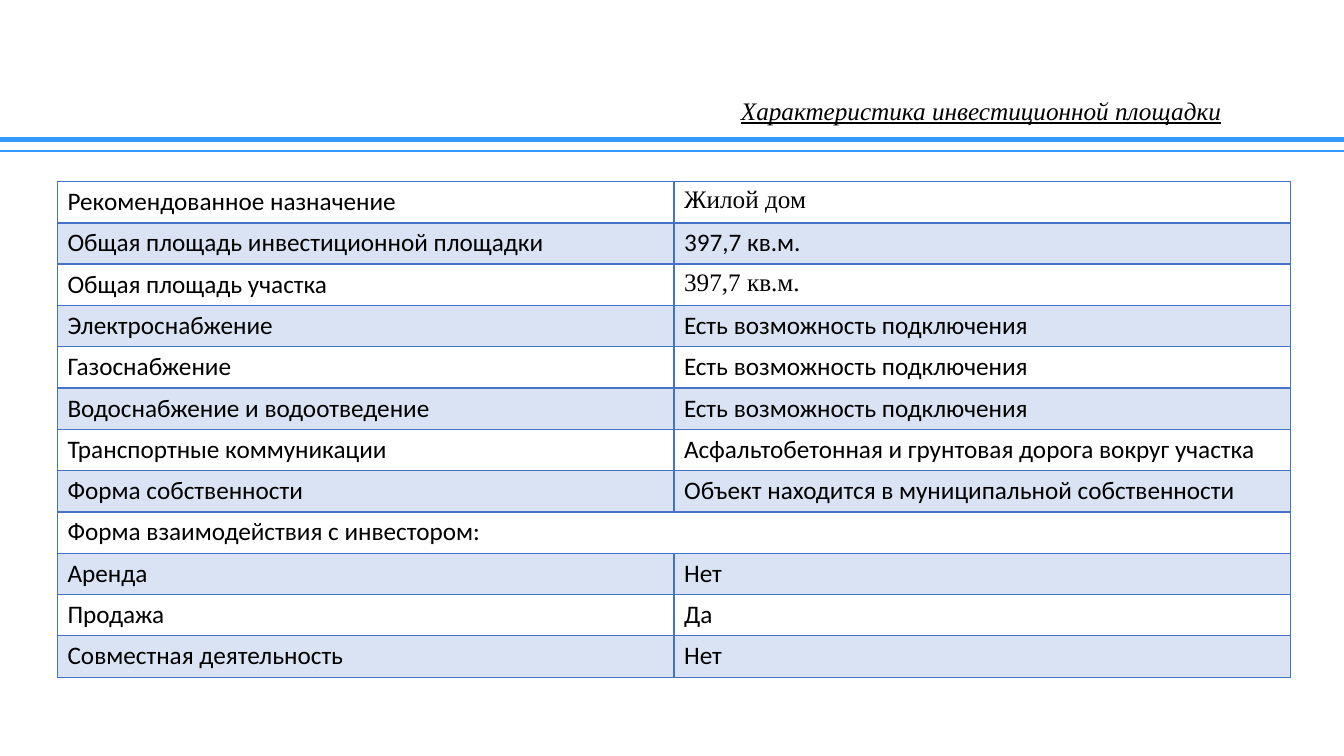
from dataclasses import dataclass

from lxml import etree
from pptx import Presentation
from pptx.dml.color import RGBColor
from pptx.enum.shapes import MSO_CONNECTOR
from pptx.enum.text import MSO_ANCHOR, PP_ALIGN
from pptx.oxml.ns import qn
from pptx.util import Inches, Pt

STRAIGHT = MSO_CONNECTOR.STRAIGHT
MIDDLE = MSO_ANCHOR.MIDDLE
CENTER = PP_ALIGN.CENTER

WIDE, HIGH = Inches(13.33), Inches(7.5)
HEX = {"rule": "3399FF", "edge": "4472C4", "band": "DAE3F3", "ink": "000000"}
SANS, SERIF = "Calibri", "Times New Roman"
BODY = {"size": Pt(18), "name": SANS, "bold": False}
HEAD = {"size": Pt(18), "name": SERIF, "italic": True, "underline": True}
FLAT = {"margin_top": 0, "margin_bottom": 0, "word_wrap": True,
        "vertical_anchor": MIDDLE}
PLAIN = {"first_row": False, "horz_banding": False}


@dataclass
class Rule:
    y: float  # share of the slide's height
    width: float


@dataclass
class Trait:
    label: str
    value: str = ""  # a trait without a value spans both columns
    face: str = SANS


RULES = [Rule(1.38 / 7.5, 3.5), Rule(0.2, 1.5)]
LINK = "Есть возможность подключения"
TRAITS = [
    Trait("Рекомендованное назначение", "Жилой дом", SERIF),
    Trait("Общая площадь инвестиционной площадки", "397,7 кв.м."),
    Trait("Общая площадь участка", "397,7 кв.м.", SERIF),
    Trait("Электроснабжение", LINK),
    Trait("Газоснабжение", LINK),
    Trait("Водоснабжение и водоотведение", LINK),
    Trait("Транспортные коммуникации",
          "Асфальтобетонная и грунтовая дорога вокруг участка"),
    Trait("Форма собственности",
          "Объект находится в муниципальной собственности"),
    Trait("Форма взаимодействия с инвестором:"),
    Trait("Аренда", "Нет"),
    Trait("Продажа", "Да"),
    Trait("Совместная деятельность", "Нет"),
]


def tint(name: str) -> RGBColor:
    return RGBColor.from_string(HEX[name])


def apply(item, form: dict) -> None:
    for key, value in form.items():
        setattr(item, key, value)


def write(frame, text: str, form: dict):
    par = frame.paragraphs[0]
    run = par.add_run()
    run.text = text
    apply(run.font, form)
    run.font.color.rgb = tint("ink")
    return par


def draw_rule(slide, rule: Rule) -> None:
    y = int(HIGH * rule.y)
    line = slide.shapes.add_connector(STRAIGHT, 0, y, WIDE, y)
    line.line.color.rgb = tint("rule")
    line.line.width = Pt(rule.width)
    etree.SubElement(line._element.spPr, qn("a:effectLst"))


def draw_title(slide, text: str) -> None:
    box = slide.shapes.add_textbox(WIDE // 2, int(HIGH * 0.13),
                                   int(WIDE * 0.46), int(HIGH * 0.036))
    apply(box.text_frame, FLAT)
    par = write(box.text_frame, text, HEAD)
    apply(par, {"alignment": CENTER, "line_spacing": 0.9})


def edge(cell, base: float) -> None:
    sides = {"lnL": 1, "lnR": 1, "lnT": 1, "lnB": base}
    for side, width in sides.items():
        line = etree.SubElement(cell._tc.get_or_add_tcPr(), qn("a:" + side),
                                w=str(Pt(width)))
        fill = etree.SubElement(line, qn("a:solidFill"))
        etree.SubElement(fill, qn("a:srgbClr"), val=HEX["edge"])


def draw_table(slide, traits: list[Trait]) -> None:
    pitch = Inches(0.41)
    table = slide.shapes.add_table(
        len(traits), 2, Inches(0.57), int(HIGH * 0.24),
        Inches(12.23), pitch * len(traits)).table
    apply(table, PLAIN)
    for i, trait in enumerate(traits):
        table.rows[i].height = pitch
        cells = [table.cell(i, j) for j in range(2)]
        for cell in cells:
            edge(cell, 1 if i else 2)
            if i % 2:
                cell.fill.solid()
                cell.fill.fore_color.rgb = tint("band")
            else:
                cell.fill.background()
        write(cells[0].text_frame, trait.label, BODY)
        if trait.value:
            write(cells[1].text_frame, trait.value, BODY | {"name": trait.face})
        else:
            cells[0].merge(cells[1])


def main() -> None:
    deck = Presentation()
    apply(deck, {"slide_width": WIDE, "slide_height": HIGH})
    slide = deck.slides.add_slide(deck.slide_layouts[6])

    # Header
    for rule in RULES:
        draw_rule(slide, rule)
    draw_title(slide, "Характеристика инвестиционной площадки")

    # Site traits
    draw_table(slide, TRAITS)
    deck.save("out.pptx")


if __name__ == "__main__":
    main()
